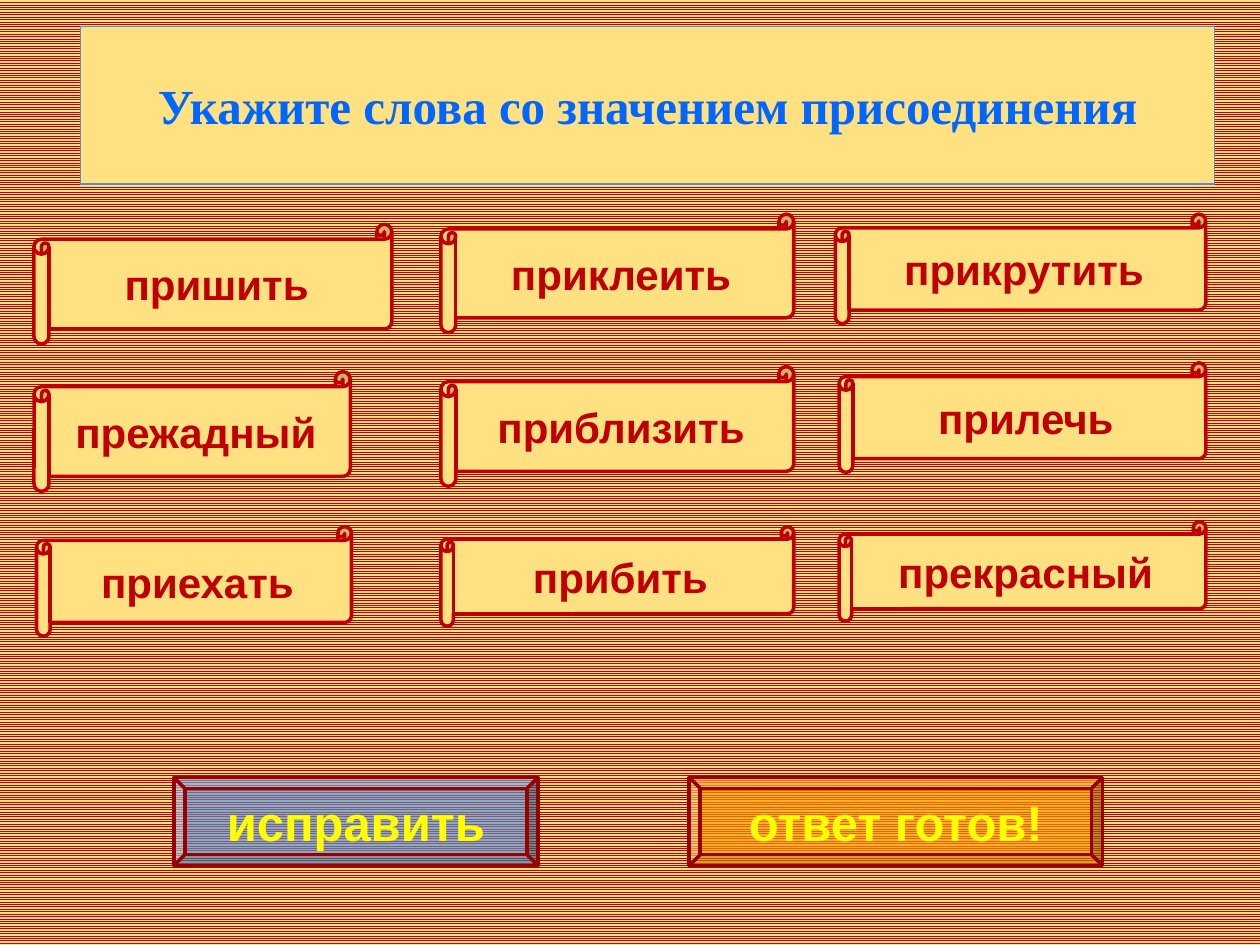
from dataclasses import dataclass
from typing import Optional

from lxml.etree import SubElement
from pptx import Presentation
from pptx.dml.color import RGBColor
from pptx.enum.dml import MSO_PATTERN
from pptx.enum.shapes import MSO_SHAPE
from pptx.enum.text import MSO_ANCHOR, PP_ALIGN
from pptx.oxml.ns import qn
from pptx.util import Inches, Pt


@dataclass(frozen=True)
class Theme:
    parchment: str = "FFE181"
    crimson: str = "C00000"
    button_line: str = "990000"
    button_text: str = "FFFF00"
    blue: str = "558ED5"
    orange: str = "FF9900"
    title_text: str = "0066FF"
    body_font: str = "Arial"
    title_font: str = "Times New Roman"
    word_size: float = 24
    large_size: float = 28
    border: float = 2
    thin_border: float = 0.75
    text_outline: float = 1.42
    button_opacity: int = 66


@dataclass(frozen=True)
class Box:
    text: str
    left: float
    top: float
    width: float
    height: float


@dataclass(frozen=True)
class Button:
    box: Box
    fill: str


THEME = Theme()
TITLE = Box("Укажите слова со значением присоединения", 0.64, 0.21, 9, 1.25)
WORDS = (
    Box("пришить", 0.27, 1.78, 2.84, 0.95),
    Box("приклеить", 3.5, 1.7, 2.8, 0.94),
    Box("прикрутить", 6.63, 1.7, 2.94, 0.87),
    Box("прежадный", 0.27, 2.95, 2.51, 0.95),
    Box("приблизить", 3.5, 2.91, 2.8, 0.95),
    Box("прилечь", 6.66, 2.88, 2.91, 0.87),
    Box("приехать", 0.29, 4.18, 2.5, 0.87),
    Box("прибить", 3.5, 4.18, 2.8, 0.79),
    Box("прекрасный", 6.66, 4.14, 2.91, 0.79),
)
BUTTONS = (
    Button(Box("исправить", 1.38, 6.17, 2.89, 0.7), THEME.blue),
    Button(Box("ответ готов!", 5.47, 6.17, 3.28, 0.7), THEME.orange),
)


def rgb(color: str) -> RGBColor:
    return RGBColor.from_string(color)


def write_text(shape, text: str, *, color: str, size: float,
               font: str = THEME.body_font, outline: Optional[str] = None) -> None:
    frame = shape.text_frame
    frame.word_wrap = True
    frame.vertical_anchor = MSO_ANCHOR.MIDDLE
    paragraph = frame.paragraphs[0]
    paragraph.alignment = PP_ALIGN.CENTER
    run = paragraph.add_run()
    run.text = text
    run.font.name = font
    run.font.size = Pt(size)
    run.font.bold = True
    run.font.color.rgb = rgb(color)
    if outline:
        properties = run.font._element
        line = SubElement(properties, qn("a:ln"), w=str(Pt(THEME.text_outline)))
        solid = SubElement(line, qn("a:solidFill"))
        SubElement(solid, qn("a:srgbClr"), val=outline)
        properties.insert(0, line)


def draw_box(slide, box: Box, preset: MSO_SHAPE, *, fill: str, line: str,
             border: float = THEME.border, opacity: int = 100):
    shape = slide.shapes.add_shape(preset, Inches(box.left), Inches(box.top),
                                   Inches(box.width), Inches(box.height))
    shape.shadow.inherit = False
    shape.fill.solid()
    shape.fill.fore_color.rgb = rgb(fill)
    if opacity < 100:
        color = shape._element.spPr.find(qn("a:solidFill")).find(qn("a:srgbClr"))
        SubElement(color, qn("a:alpha"), val=str(opacity * 1000))
    shape.line.color.rgb = rgb(line)
    shape.line.width = Pt(border)
    return shape


def draw_word(slide, word: Box) -> None:
    scroll = draw_box(slide, word, MSO_SHAPE.HORIZONTAL_SCROLL,
                      fill=THEME.parchment, line=THEME.crimson)
    write_text(scroll, word.text, color=THEME.crimson, size=THEME.word_size)


def draw_button(slide, button: Button) -> None:
    bevel = draw_box(slide, button.box, MSO_SHAPE.BEVEL, fill=button.fill,
                     line=THEME.button_line, opacity=THEME.button_opacity)
    write_text(bevel, button.box.text, color=THEME.button_text,
               size=THEME.large_size, outline=THEME.crimson)


def draw_title(slide, title: Box) -> None:
    panel = draw_box(slide, title, MSO_SHAPE.RECTANGLE, fill=THEME.parchment,
                     line=THEME.blue, border=THEME.thin_border)
    write_text(panel, title.text, color=THEME.title_text,
               size=THEME.large_size, font=THEME.title_font)


def draw_background(slide) -> None:
    fill = slide.background.fill
    fill.patterned()
    fill.pattern = MSO_PATTERN.LIGHT_HORIZONTAL
    fill.fore_color.rgb = rgb(THEME.crimson)
    fill.back_color.rgb = rgb(THEME.parchment)


def main() -> None:
    presentation = Presentation()
    presentation.slide_width = Inches(10)
    presentation.slide_height = Inches(7.5)
    slide = presentation.slides.add_slide(presentation.slide_layouts[6])
    draw_background(slide)
    for word in WORDS:
        draw_word(slide, word)
    for button in BUTTONS:
        draw_button(slide, button)
    draw_title(slide, TITLE)
    presentation.save("out.pptx")


if __name__ == "__main__":
    main()
